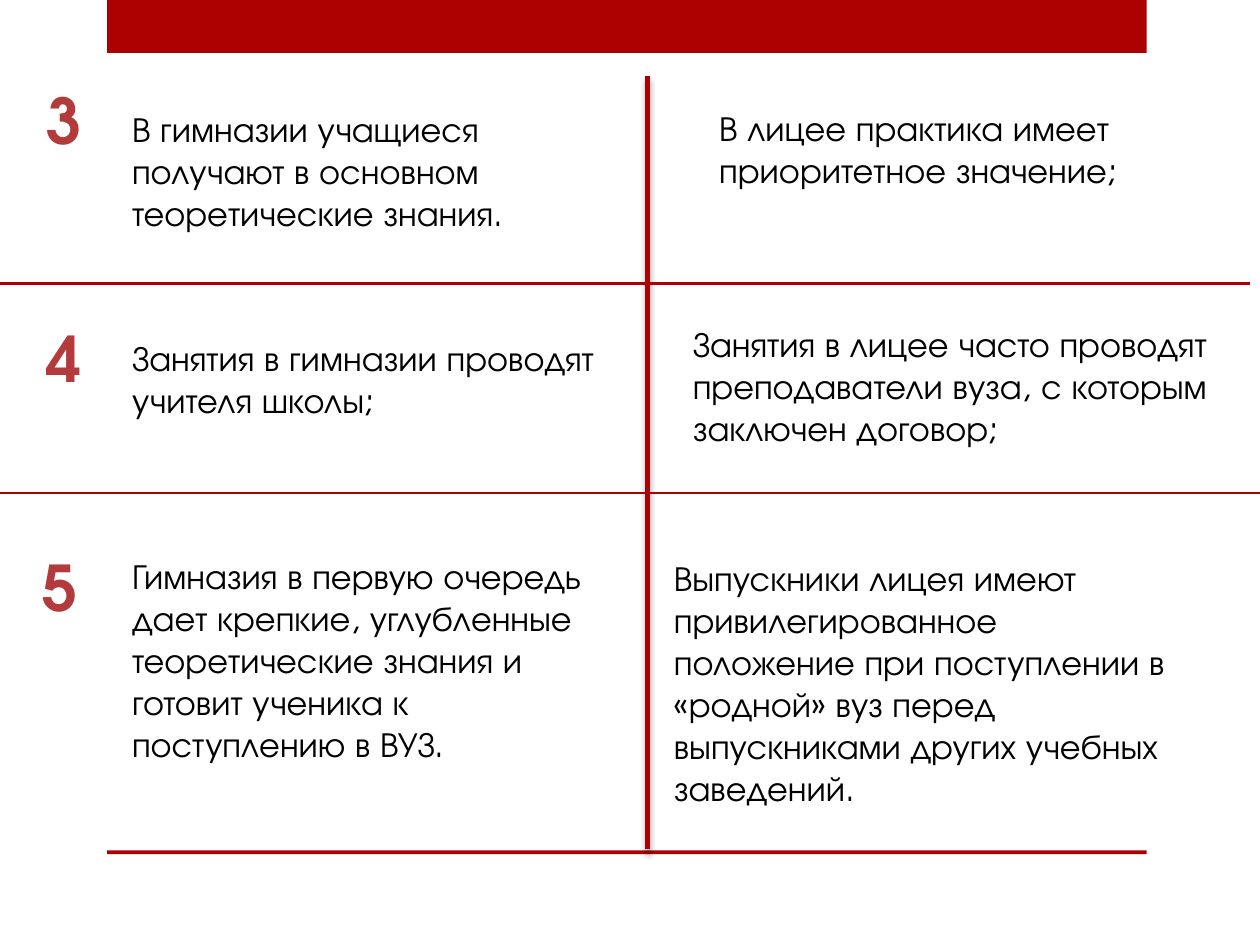
"""Comparison of gymnasium and lyceum, points 3 to 5, on a 100 by 75 grid."""
from typing import NamedTuple, Optional

from lxml import etree
from pptx import Presentation
from pptx.dml.color import RGBColor
from pptx.enum import shapes, text
from pptx.oxml import ns
from pptx import util as u

COLUMNS, ROWS = 100, 75
CELL = u.Inches(0.1)
FONT = "TeX Gyre Adventor"
RED, NUMBER_RED, BLACK = "AD0101", "B33B3B", "000000"


class Area(NamedTuple):
    """A rectangle in grid cells."""
    column: float
    row: float
    columns: float
    rows: float


class Wording(NamedTuple):
    """Text with its area."""
    words: str
    area: Area


class Point(NamedTuple):
    """One numbered difference between the two schools."""
    number: Wording
    gymnasium: Wording
    lyceum: Wording


class Rule(NamedTuple):
    """A line between two grid positions."""
    start: tuple[float, float]
    end: tuple[float, float]
    width: float
    shadow: bool = False


BARS = [Area(8.5, 0, 82.5, 4.2), Area(8.5, 67.5, 82.5, 0.3)]
RULES = [
    Rule((51.4, 6), (51.4, 67.4), 2.75, shadow=True),
    Rule((-0.8, 22.5), (99.2, 22.5), 1.25),
    Rule((0, 39.1), (COLUMNS, 39.1), 1.25),
]
POINTS = [
    Point(
        Wording("3", Area(2.7, 6, 4.8, 7.1)),
        Wording("В гимназии учащиеся получают в основном теоретические знания.",
                Area(9.5, 8, 40, 11.1)),
        Wording("В лицее практика имеет приоритетное значение;",
                Area(56.1, 8, 37.8, 7.7)),
    ),
    Point(
        Wording("4", Area(2.7, 24.9, 4.8, 7.1)),
        Wording("Занятия в гимназии проводят учителя школы;",
                Area(9.5, 26.2, 44.5, 7.7)),
        Wording("Занятия в лицее часто проводят преподаватели вуза, "
                "с которым заключен договор;",
                Area(54, 25.1, 44.5, 11.1)),
    ),
    Point(
        Wording("5", Area(2.4, 43, 4.8, 7.1)),
        Wording("Гимназия в первую очередь дает крепкие, углубленные "
                "теоретические знания и готовит ученика к поступлению в ВУЗ.",
                Area(9.5, 43.5, 39.1, 21.2)),
        Wording("Выпускники лицея имеют привилегированное положение при "
                "поступлении в «родной» вуз перед выпускниками других "
                "учебных заведений.",
                Area(52.5, 43.7, 41.5, 21.2)),
    ),
]


def cells(count: float) -> int:
    """Turn grid cells into a length."""
    return round(count * CELL)


def colour(value: str) -> RGBColor:
    """Turn a hex string into a colour."""
    return RGBColor.from_string(value)


def draw_bar(slide, bar: Area) -> None:
    """Draw a plain red bar."""
    shape = slide.shapes.add_shape(
        shapes.MSO_SHAPE.RECTANGLE, *map(cells, bar))
    shape.shadow.inherit = False
    shape.fill.solid()
    shape.fill.fore_color.rgb = colour(RED)
    shape.line.fill.background()


def draw_rule(slide, rule: Rule) -> None:
    """Draw a red line, with a soft shadow if the rule asks for it."""
    line = slide.shapes.add_connector(
        shapes.MSO_CONNECTOR.STRAIGHT, *map(cells, rule.start + rule.end))
    line.line.color.rgb = colour(RED)
    line.line.width = u.Pt(rule.width)
    effects = etree.SubElement(line._element.spPr, ns.qn("a:effectLst"))
    if rule.shadow:
        shadow = etree.SubElement(
            effects, ns.qn("a:outerShdw"), blurRad=str(u.Pt(3)),
            dist=str(u.Pt(3)), dir="5400000", rotWithShape="0")
        tint = etree.SubElement(shadow, ns.qn("a:srgbClr"), val=BLACK)
        etree.SubElement(tint, ns.qn("a:alpha"), val="35000")


def write(slide, wording: Wording, size: float, ink: str, bold: bool = False,
          align: Optional[text.PP_ALIGN] = None, wrap: bool = True) -> None:
    """Write one text box."""
    frame = slide.shapes.add_textbox(*map(cells, wording.area)).text_frame
    frame.word_wrap = wrap
    frame.auto_size = text.MSO_AUTO_SIZE.SHAPE_TO_FIT_TEXT
    paragraph = frame.paragraphs[0]
    paragraph.alignment = align
    run = paragraph.add_run()
    run.text = wording.words
    run.font.name = FONT
    run.font.size = u.Pt(size)
    run.font.bold = bold
    run.font.color.rgb = colour(ink)


def draw_point(slide, point: Point) -> None:
    """Write a number and its two statements."""
    write(slide, point.number, 36, NUMBER_RED, bold=True,
          align=text.PP_ALIGN.CENTER, wrap=False)
    for statement in (point.gymnasium, point.lyceum):
        write(slide, statement, 20, BLACK)


def main() -> None:
    """Build and save the slide."""
    deck = Presentation()
    deck.slide_width, deck.slide_height = cells(COLUMNS), cells(ROWS)
    slide = deck.slides.add_slide(deck.slide_layouts[6])
    for bar in BARS:
        draw_bar(slide, bar)
    for rule in RULES:
        draw_rule(slide, rule)
    for point in POINTS:
        draw_point(slide, point)
    deck.save("out.pptx")


if __name__ == "__main__":
    main()
